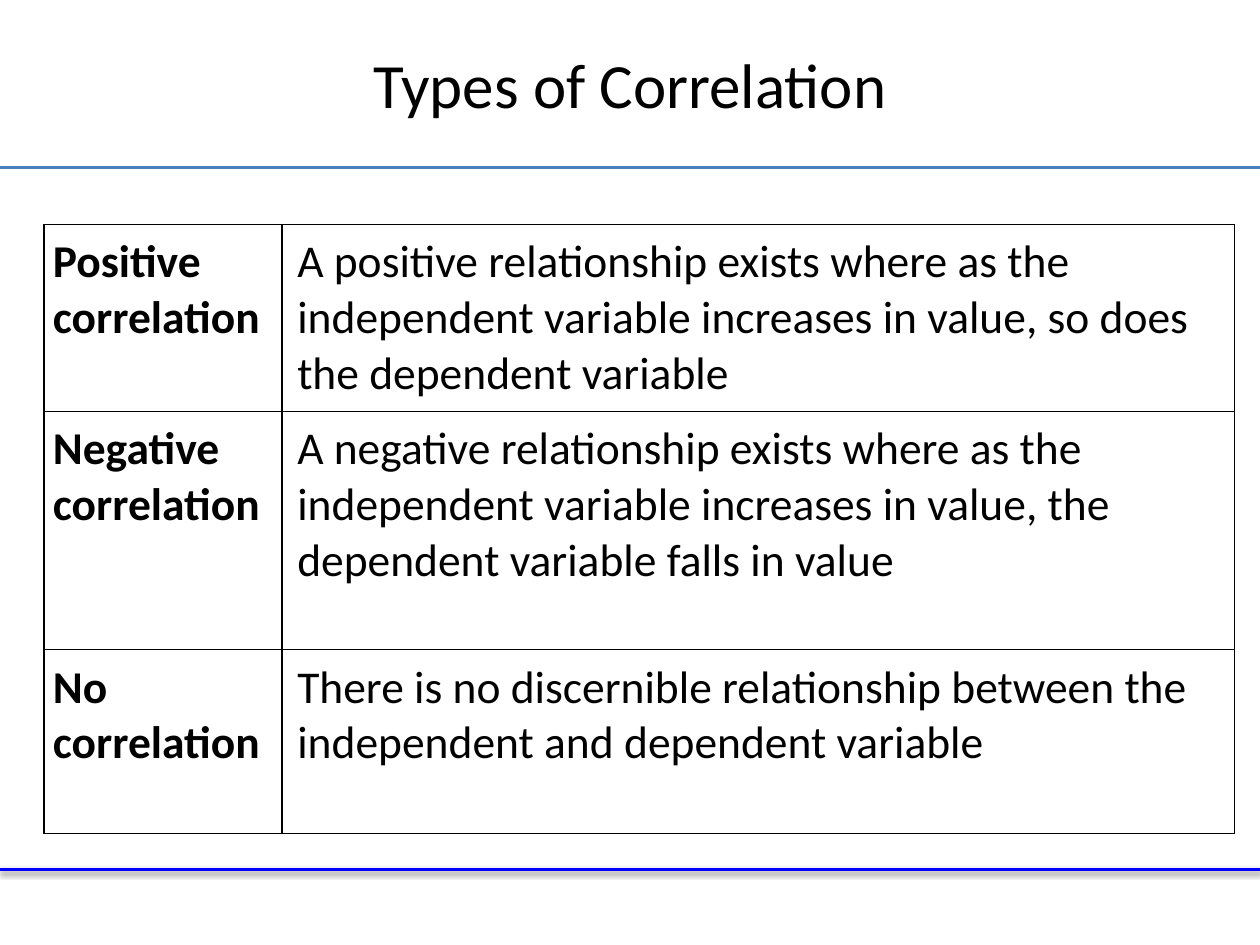
import pptx
import pptx.dml.color
import pptx.enum.shapes
import pptx.enum.text
import pptx.oxml
import pptx.oxml.ns
import pptx.util
from lxml import etree

Inches, Pt = pptx.util.Inches, pptx.util.Pt
RGB = pptx.dml.color.RGBColor.from_string
ANCHOR = pptx.enum.text.MSO_ANCHOR
qn = pptx.oxml.ns.qn


class Theme:
    font = "Calibri"
    text, rule, footer, border = "000000", "4B7EBC", "0000FF", "000000"
    title_size, body_size = 36, 26
    rule_width, footer_width, border_width = 1.75, 2, 1


CORRELATIONS = [
    ("Positive correlation",
     "A positive relationship exists where as the independent variable "
     "increases in value, so does the dependent variable"),
    ("Negative correlation",
     "A negative relationship exists where as the independent variable "
     "increases in value, the dependent variable falls in value"),
    ("No correlation",
     "There is no discernible relationship between the independent and "
     "dependent variable"),
]


def set_attributes(obj, values):
    for name, value in values.items():
        setattr(obj, name, value)


def write(tf, text, size, bold=False, align=None):
    tf.word_wrap = True
    p = tf.paragraphs[0]
    p.alignment = align
    r = p.add_run()
    r.text = text
    set_attributes(r.font, {"name": Theme.font, "size": Pt(size), "bold": bold})
    r.font.color.rgb = RGB(Theme.text)


def add_rule(s, y, width, color, weight, shadow=False):
    """Draw a full-width rule, with a soft shadow below it if asked."""
    line = s.shapes.add_connector(
        pptx.enum.shapes.MSO_CONNECTOR.STRAIGHT, 0, y, width, y)
    line.line.color.rgb = RGB(color)
    line.line.width = Pt(weight)
    effects = etree.SubElement(line._element.spPr, qn("a:effectLst"))
    if shadow:
        outer = etree.SubElement(
            effects, qn("a:outerShdw"), blurRad=str(Pt(3.1)),
            dist=str(Pt(1.6)), dir="5400000", rotWithShape="0")
        black = etree.SubElement(outer, qn("a:srgbClr"), val="000000")
        etree.SubElement(black, qn("a:alpha"), val="38000")


def place_title(s, text, left, top, width, height):
    title = s.shapes.title
    set_attributes(title, {"left": left, "top": top, "width": width, "height": height})
    title.text_frame.vertical_anchor = ANCHOR.MIDDLE
    write(title.text_frame, text, Theme.title_size,
          align=pptx.enum.text.PP_ALIGN.CENTER)


def add_borders(cell):
    tc_pr = cell._tc.get_or_add_tcPr()
    for i, side in enumerate(("lnL", "lnR", "lnT", "lnB")):
        ln = pptx.oxml.parse_xml(
            f'<a:{side} {pptx.oxml.ns.nsdecls("a")} w="{Pt(Theme.border_width)}">'
            f'<a:solidFill><a:srgbClr val="{Theme.border}"/></a:solidFill>'
            f'</a:{side}>')
        tc_pr.insert(i, ln)


def add_definitions(s, entries, left, top, width, heights):
    """Table of bold terms, one fifth of the width, and their meanings."""
    table = s.shapes.add_table(
        len(entries), 2, left, top, width, sum(heights)).table
    set_attributes(table, {"first_row": False, "horz_banding": False})
    table.columns[0].width = width // 5
    table.columns[1].width = width - width // 5
    for row, height, entry in zip(table.rows, heights, entries):
        row.height = height
        for i, (cell, text) in enumerate(zip(row.cells, entry)):
            set_attributes(cell, {
                "margin_left": Inches((0.07, 0.12)[i]),
                "margin_right": Inches(0.07),
                "margin_top": Inches(0.08),
                "margin_bottom": Inches(0.08),
                "vertical_anchor": ANCHOR.TOP,
            })
            cell.fill.background()
            add_borders(cell)
            write(cell.text_frame, text, Theme.body_size, bold=i == 0)


def main():
    prs = pptx.Presentation()
    prs.slide_width, prs.slide_height = Inches(10), Inches(7.5)
    s = prs.slides.add_slide(prs.slide_layouts[5])
    add_rule(s, Inches(6.9), prs.slide_width, Theme.footer,
             Theme.footer_width, shadow=True)
    add_rule(s, Inches(1.33), prs.slide_width, Theme.rule, Theme.rule_width)
    place_title(s, "Types of Correlation",
                Inches(0.5), Inches(0.08), Inches(9), Inches(1.17))
    add_definitions(s, CORRELATIONS, Inches(0.35), Inches(1.78), Inches(9.45),
                    [Inches(h) for h in (1.46, 1.89, 1.46)])
    prs.save("out.pptx")


if __name__ == "__main__":
    main()
